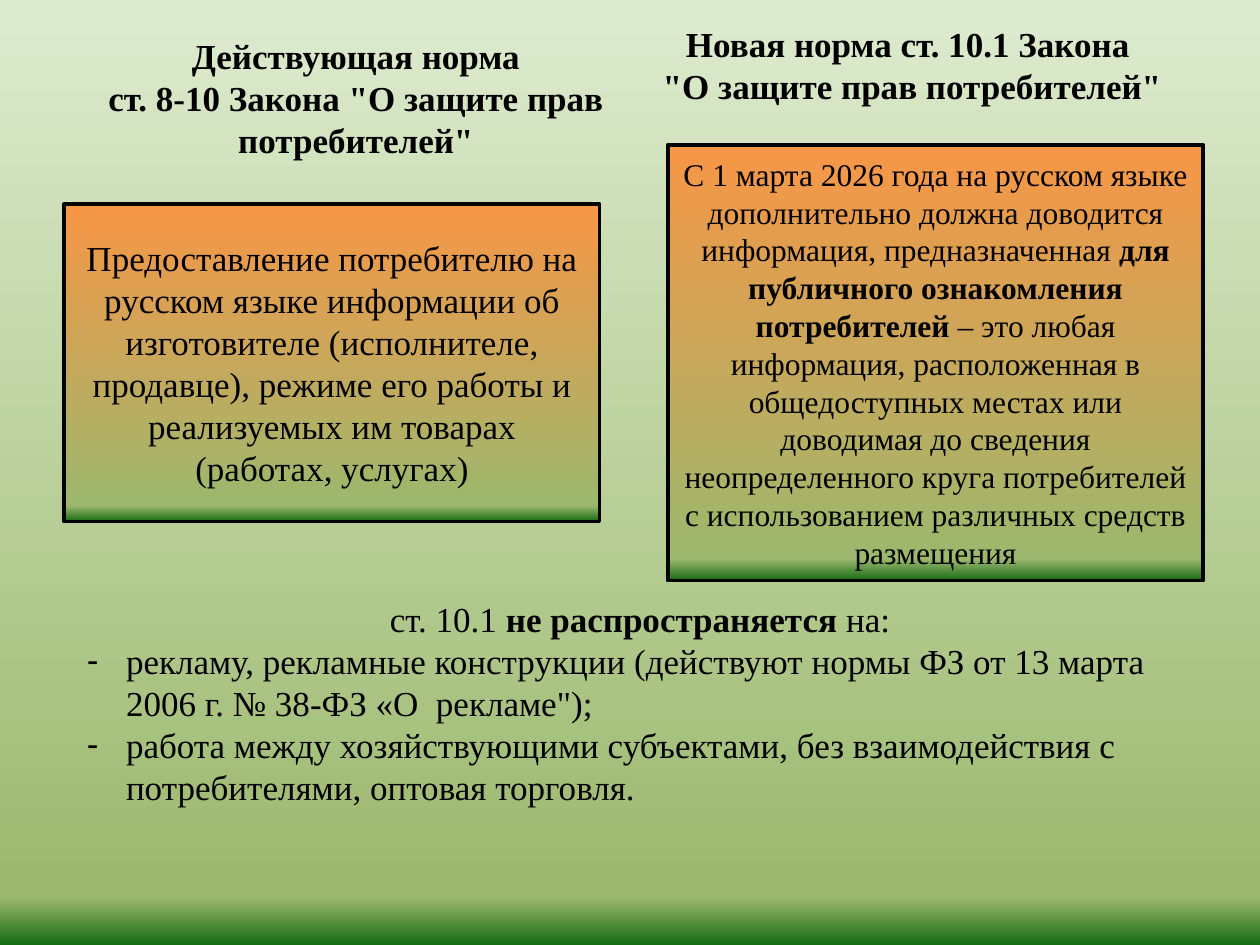
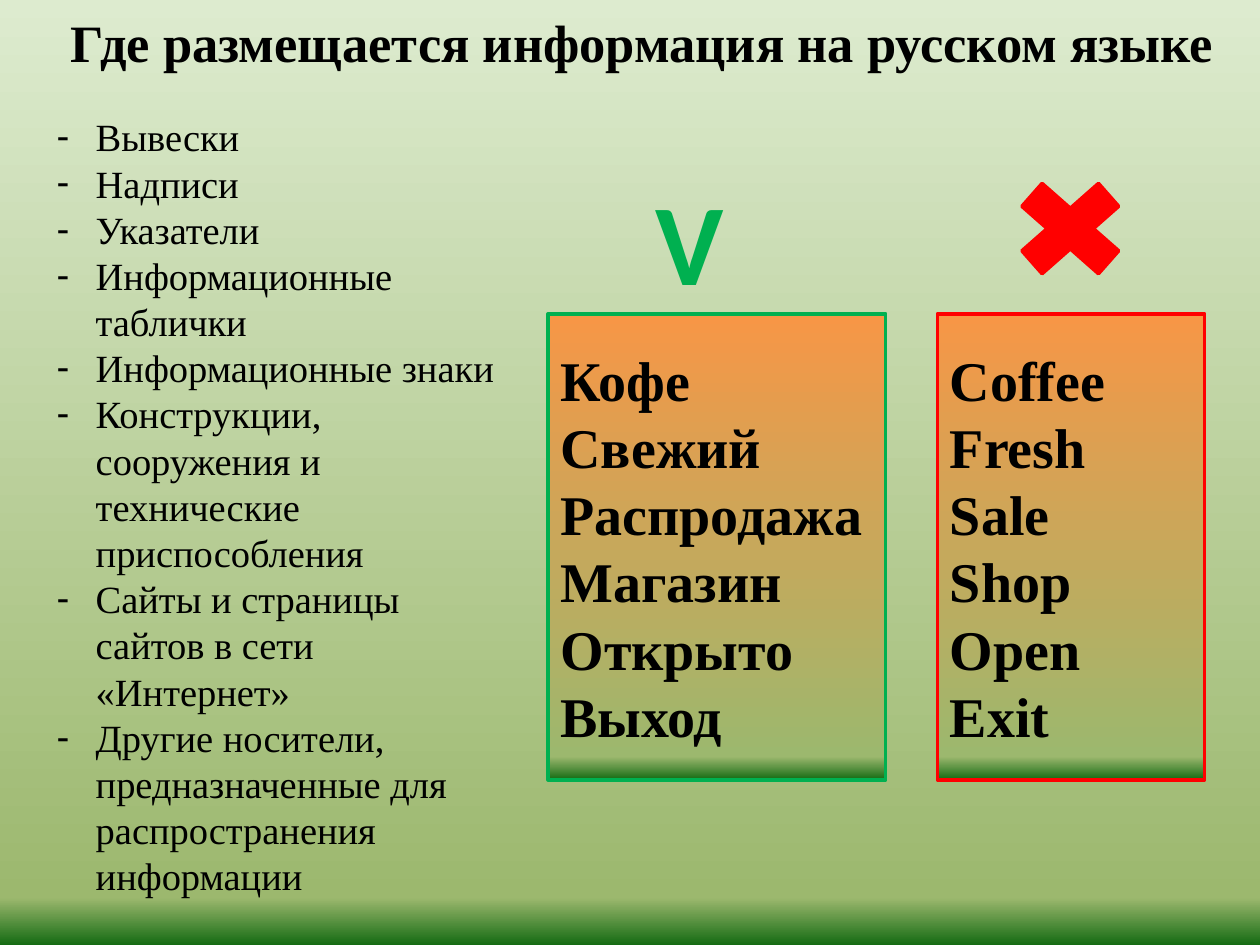
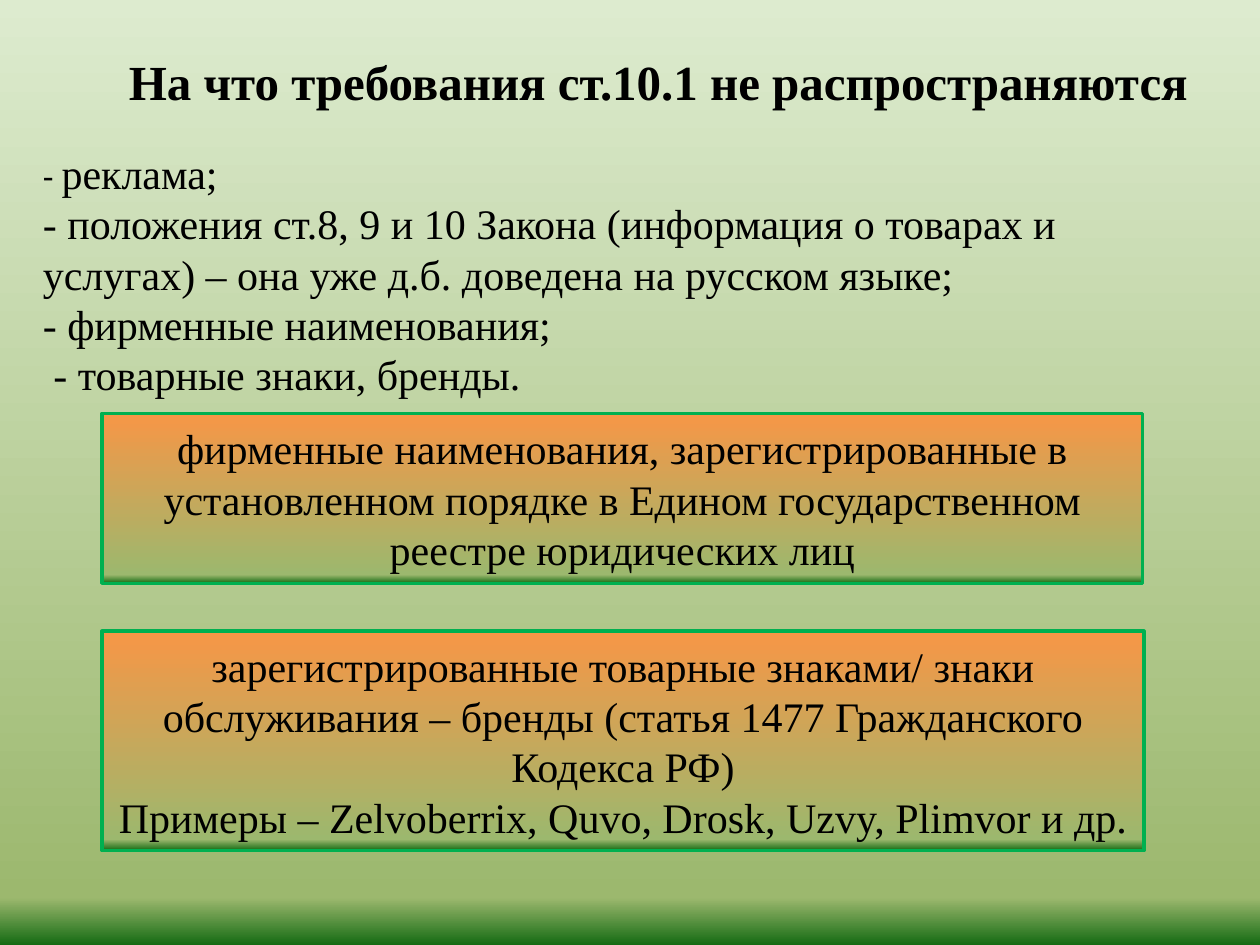
"""Build three slides on the rules for consumer information in Russian."""
from dataclasses import dataclass

from pptx import Presentation
from pptx.dml.color import RGBColor as RGB
from pptx.enum.shapes import MSO_SHAPE as SHAPE
from pptx.enum.text import MSO_ANCHOR as ANCHOR, MSO_AUTO_SIZE as AUTO, PP_ALIGN as ALIGN
from pptx.oxml import parse_xml
from pptx.oxml.ns import nsdecls, qn
from pptx.util import Inches, Pt


@dataclass(frozen=True)
class Theme:
    """Colours, fonts and sizes shared by all slides."""
    ink: str = "000000"
    green: str = "00B050"
    red: str = "FF0000"
    page: tuple = ((0, "DDEBCF"), (95, "9CB86E"), (100, "156B13"))
    panel: tuple = ((0, "F79646"), (95, "9CB86E"), (100, "156B13"))
    face: str = "Times New Roman"
    plain: str = "Calibri"
    small: int = 18
    text: int = 20
    list: int = 22
    large: int = 24
    head: int = 28
    top: int = 30
    word: int = 32
    sign: int = 66
    edge: int = 2
    hang: float = 0.31


T = Theme()
WIDE, HIGH = Inches(10), Inches(7.5)
MID, LEFT = ALIGN.CENTER, ALIGN.LEFT
BOLD = {"bold": True}

SLIDES = [
    [
        dict(kind="title", at=(6.6, 2.93, 43.3, 14.8), size=T.text, bold=True, lines=[
            "Действующая норма",
            'ст. 8-10 Закона "О защите прав потребителей"']),
        dict(kind="label", at=(50.8, 1.73, 42.5, 10.27), size=T.text, bold=True, lines=[
            "Новая норма ст. 10.1 Закона",
            ' "О защите прав потребителей"']),
        dict(kind="panel", at=(5.1, 21.6, 42.5, 33.6), size=T.text, lines=[
            "Предоставление потребителю на русском языке информации об изготовителе "
            "(исполнителе, продавце), режиме его работы и реализуемых им товарах "
            "(работах, услугах)"]),
        dict(kind="panel", at=(53, 15.33, 42.5, 46.13), size=T.small, lines=[
            "С 1 марта 2026 года на русском языке дополнительно должна доводится "
            "информация, предназначенная |для публичного ознакомления потребителей| – это "
            "любая информация, расположенная в общедоступных местах или доводимая до "
            "сведения неопределенного круга потребителей с использованием различных "
            "средств размещения"]),
        dict(kind="body", at=(5.9, 62.53, 89.8, 23.73), size=T.text, dash=1, lines=[
            "ст. 10.1 |не распространяется |на:",
            "рекламу, рекламные конструкции (действуют нормы ФЗ от 13 марта 2006 г. "
            '№ 38-ФЗ «О  рекламе");',
            "работа между хозяйствующими субъектами, без взаимодействия с потребителями, "
            "оптовая торговля."]),
    ],
    [
        dict(kind="title", at=(2, 0.4, 98, 8.13), size=T.top, bold=True, lines=[
            "Где размещается информация на русском языке"]),
        dict(kind="body", at=(3.5, 11.33, 38.1, 85.33), size=T.list, dash=0, lines=[
            "Вывески", "Надписи", "Указатели", "Информационные таблички",
            "Информационные знаки",
            "Конструкции, сооружения и технические приспособления",
            "Сайты и страницы сайтов в сети «Интернет»",
            "Другие носители, предназначенные для распространения информации"]),
        dict(kind="panel", at=(43.5, 33.2, 26.8, 49.33), size=T.word, bold=True,
             edge=T.green, align=LEFT, lines=[
                 "Кофе", "Свежий", "Распродажа", "Магазин", "Открыто", "Выход"]),
        dict(kind="panel", at=(74.4, 33.2, 21.2, 49.33), size=T.word, bold=True,
             edge=T.red, align=LEFT, lines=[
                 "Coffee", "Fresh", "Sale", "Shop", "Open", "Exit"]),
        dict(kind="cross", at=(79.1, 17.33, 11.7, 13.73), edge=T.red),
        dict(kind="label", at=(49.2, 17.33, 11, 16.13), size=T.sign, bold=True,
             face=T.plain, hue=T.green, lines=["V"]),
    ],
    [
        dict(kind="title", at=(8.1, 4.8, 88.3, 7.6), size=T.head, bold=True, wrap=False,
             lines=["На что требования ст.10.1 не распространяются"]),
        dict(kind="body", at=(2.4, 14.93, 95.3, 28.27), size=T.large, align=LEFT,
             alt={"name": T.plain, "size": Pt(T.text)}, lines=[
                 "|- |реклама;",
                 "- положения ст.8, 9 и 10 Закона (информация о товарах и услугах) – она "
                 "уже д.б. доведена на русском языке;",
                 "- фирменные наименования;",
                 " - товарные знаки, бренды."]),
        dict(kind="panel", at=(8.1, 43.73, 82.6, 18), size=T.large, edge=T.green, lines=[
            "фирменные наименования, зарегистрированные в установленном порядке в Едином "
            "государственном реестре юридических лиц"]),
        dict(kind="panel", at=(8.1, 66.8, 82.7, 23.2), size=T.large, edge=T.green, lines=[
            "зарегистрированные товарные знаками/ знаки обслуживания – бренды "
            "(статья 1477 Гражданского Кодекса РФ)",
            "Примеры – Zelvoberrix, Quvo, Drosk, Uzvy, Plimvor и др."]),
    ],
]


def grade(fill, root, stops):
    """Fill from top to bottom through the given colour stops."""
    fill.gradient()
    fill.gradient_angle = 270
    next(root.iter(qn("a:gsLst")))[:] = [
        parse_xml(f'<a:gs {nsdecls("a")} pos="{pos * 1000}"><a:srgbClr val="{hue}"/></a:gs>')
        for pos, hue in stops]


def mark(para, dash):
    """Set a hanging dash, or no bullet at all."""
    props = para._p.get_or_add_pPr()
    hang = Inches(T.hang) if dash else 0
    props.set("marL", str(hang))
    props.set("indent", str(-hang))
    tag = 'buChar char="-"' if dash else "buNone"
    props.append(parse_xml(f'<a:{tag} {nsdecls("a")}/>'))


def write(frame, lines, size, bold=False, face=T.face, hue=T.ink, align=MID,
          dash=None, alt=BOLD, wrap=True, anchor=ANCHOR.TOP):
    """Write lines, giving each part between bars the alternate font."""
    frame.word_wrap = wrap
    frame.auto_size = AUTO.NONE
    frame.vertical_anchor = anchor
    for row, line in enumerate(lines):
        para = frame.add_paragraph() if row else frame.paragraphs[0]
        listed = dash is not None and row >= dash
        para.alignment = LEFT if listed else align
        para.space_before = Pt(0)
        mark(para, listed)
        font = para.font
        font.name, font.size, font.bold = face, Pt(size), bold
        font.color.rgb = RGB.from_string(hue)
        for turn, part in enumerate(line.split("|")):
            if part:
                run = para.add_run()
                run.text = part
                if turn % 2:
                    for key, value in alt.items():
                        setattr(run.font, key, value)


def place(slide, kind, at, edge=T.ink, **text):
    """Put one item on the slide, placed by percent of its size."""
    left, top, wide, high = (
        round(part * whole / 100) for part, whole in zip(at, (WIDE, HIGH) * 2))
    if kind in ("title", "body"):
        item = slide.placeholders[0 if kind == "title" else 1]
        item.left, item.top, item.width, item.height = left, top, wide, high
    elif kind == "label":
        item = slide.shapes.add_textbox(left, top, wide, high)
    else:
        form = SHAPE.RECTANGLE if kind == "panel" else SHAPE.MATH_MULTIPLY
        item = slide.shapes.add_shape(form, left, top, wide, high)
        item.shadow.inherit = False
        item.line.color.rgb = RGB.from_string(edge)
        item.line.width = Pt(T.edge)
        if kind == "panel":
            grade(item.fill, item.element, T.panel)
            text["anchor"] = ANCHOR.MIDDLE
        else:
            item.fill.solid()
            item.fill.fore_color.rgb = RGB.from_string(edge)
    if "lines" in text:
        write(item.text_frame, **text)


def main():
    """Build and save the deck."""
    deck = Presentation()
    deck.slide_width, deck.slide_height = WIDE, HIGH
    base = deck.slide_master
    grade(base.background.fill, base.element, T.page)
    for items in SLIDES:
        slide = deck.slides.add_slide(deck.slide_layouts[1])
        for item in items:
            place(slide, **item)
    deck.save("out.pptx")


if __name__ == "__main__":
    main()
